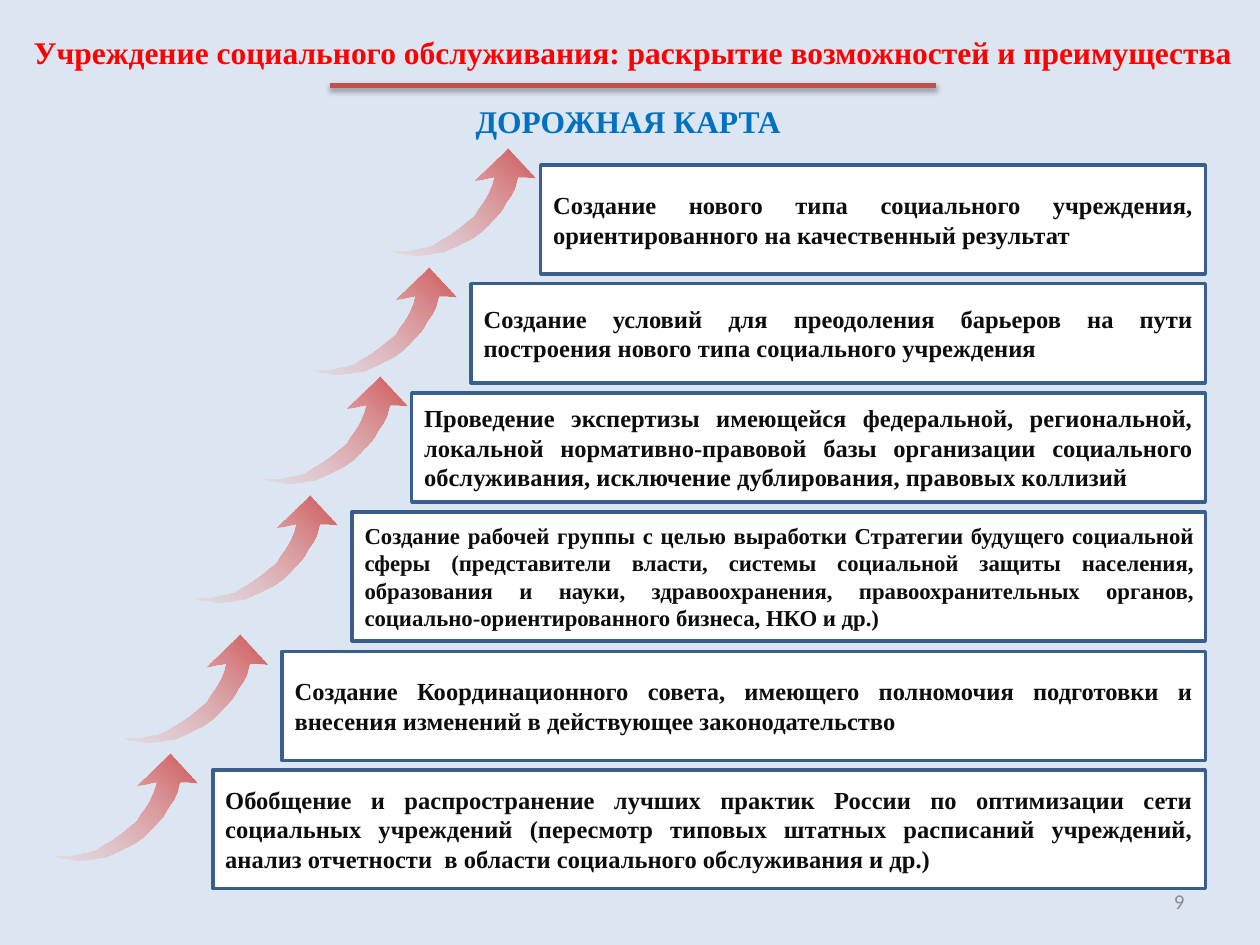
from dataclasses import dataclass

from lxml import etree
from pptx import Presentation
from pptx.dml.color import RGBColor
from pptx.enum.shapes import MSO_CONNECTOR, MSO_SHAPE
from pptx.enum.text import MSO_ANCHOR, MSO_AUTO_SIZE, PP_ALIGN
from pptx.oxml.ns import qn
from pptx.slide import Slide
from pptx.util import Cm, Pt

STRAIGHT = MSO_CONNECTOR.STRAIGHT
RECTANGLE = MSO_SHAPE.RECTANGLE
MIDDLE = MSO_ANCHOR.MIDDLE
NO_AUTOFIT = MSO_AUTO_SIZE.NONE
CENTER, RIGHT, JUSTIFY = PP_ALIGN.CENTER, PP_ALIGN.RIGHT, PP_ALIGN.JUSTIFY

COLORS = {
    "background": "DCE6F2",
    "title": "FF0000",
    "subtitle": "0070C0",
    "rule": "C0504D",
    "box": "FFFFFF",
    "border": "3A5F8C",
    "text": "0D0D0D",
    "number": "8C8C8C",
    "arrow_tail": "E9C2C2",
    "arrow_head": "D05656",
    "shadow": "000000",
}

BOX_RIGHT = 24.3
ARROW_RISE = 0.33  # each arrow starts this far above its box
ARROW_UNITS_PER_INCH = 100
ARROW_UNIT = 2.54 / ARROW_UNITS_PER_INCH
ARROW_OUTLINE = [
    (0, 81), (4, 81), (8, 81), (12, 81), (16, 80), (21, 79), (27, 78), (33, 76),
    (39, 72), (46, 68), (53, 63), (59, 58), (65, 53), (69, 47), (72, 43), (75, 38),
    (77, 34), (79, 30), (80, 27), (81, 23), (65, 26), (92, 0), (114, 24), (100, 23),
    (99, 25), (98, 30), (95, 37), (92, 41), (89, 46), (86, 51), (81, 56), (76, 61),
    (71, 66), (64, 71), (56, 75), (48, 79), (41, 82), (34, 83), (28, 84), (22, 85),
    (17, 85), (12, 84), (8, 83), (5, 83), (2, 82),
]

# arrow left, box left, box top, box height (cm), text size, text
STEPS = [
    (1.09, 4.29, 15.52, 2.39, 14,
     "Обобщение и распространение лучших практик России по оптимизации сети "
     "социальных учреждений (пересмотр типовых штатных расписаний учреждений, "
     "анализ отчетности  в области социального обслуживания и др.)"),
    (2.49, 5.69, 13.13, 2.2, 14,
     "Создание Координационного совета, имеющего полномочия подготовки и "
     "внесения изменений в действующее законодательство"),
    (3.91, 7.1, 10.32, 2.6, 13,
     "Создание рабочей группы с целью выработки Стратегии будущего социальной "
     "сферы (представители власти, системы социальной защиты населения, "
     "образования и науки, здравоохранения, правоохранительных органов, "
     "социально-ориентированного бизнеса, НКО и др.)"),
    (5.31, 8.3, 7.92, 2.2, 14,
     "Проведение экспертизы имеющейся федеральной, региональной, локальной "
     "нормативно-правовой базы организации социального обслуживания, "
     "исключение дублирования, правовых коллизий"),
    (6.3, 9.5, 5.72, 2.0, 14,
     "Создание условий для преодоления барьеров на пути построения нового "
     "типа социального учреждения"),
    (7.9, 10.9, 3.33, 2.2, 14,
     "Создание нового типа социального учреждения, ориентированного на "
     "качественный результат"),
]


def rgb(name):
    return RGBColor.from_string(COLORS[name])


@dataclass
class RoadmapSlide:
    slide: Slide
    font: str = "Times New Roman"

    def set_text(self, shape, text, size, color, align, bold=True, font=None, wrap=True):
        frame = shape.text_frame
        frame.text = text
        frame.word_wrap = wrap
        frame.auto_size = NO_AUTOFIT
        frame.vertical_anchor = MIDDLE
        paragraph = frame.paragraphs[0]
        paragraph.alignment = align
        paragraph.font.name = font or self.font
        paragraph.font.size = Pt(size)
        paragraph.font.bold = bold
        paragraph.font.color.rgb = rgb(color)

    def title(self, text, left, top, width, height):
        shape = self.slide.shapes.title
        shape.left, shape.top = Cm(left), Cm(top)
        shape.width, shape.height = Cm(width), Cm(height)
        self.set_text(shape, text, 18, "title", CENTER, wrap=False)

    def label(self, text, left, top, width, height, size, color, align, **style):
        shape = self.slide.shapes.add_textbox(Cm(left), Cm(top), Cm(width), Cm(height))
        self.set_text(shape, text, size, color, align, **style)

    def rule(self, left, right, top):
        """Horizontal line with a soft shadow below it."""
        line = self.slide.shapes.add_connector(
            STRAIGHT, Cm(left), Cm(top), Cm(right), Cm(top))
        line.line.color.rgb = rgb("rule")
        line.line.width = Pt(3)
        effects = etree.SubElement(line._element.spPr, qn("a:effectLst"))
        shadow = etree.SubElement(
            effects, qn("a:outerShdw"), blurRad=str(Pt(3.1)), dist=str(Pt(1.8)),
            dir="5400000", rotWithShape="0")
        color = etree.SubElement(shadow, qn("a:srgbClr"), val=COLORS["shadow"])
        etree.SubElement(color, qn("a:alpha"), val="35000")

    def box(self, text, left, top, height, size):
        shape = self.slide.shapes.add_shape(
            RECTANGLE, Cm(left), Cm(top), Cm(BOX_RIGHT - left), Cm(height))
        shape.shadow.inherit = False
        shape.fill.solid()
        shape.fill.fore_color.rgb = rgb("box")
        shape.line.color.rgb = rgb("border")
        shape.line.width = Pt(2)
        self.set_text(shape, text, size, "text", JUSTIFY)

    def arrow(self, left, top):
        """Curved arrow that rises to the right and fades towards its tail."""
        builder = self.slide.shapes.build_freeform(
            *ARROW_OUTLINE[0], scale=Cm(ARROW_UNIT))
        builder.add_line_segments(ARROW_OUTLINE[1:], close=True)
        shape = builder.convert_to_shape(Cm(left), Cm(top))
        shape.shadow.inherit = False
        shape.line.fill.background()
        shape.fill.gradient()
        shape.fill.gradient_angle = 45
        tail, head = shape.fill.gradient_stops
        tail.position, head.position = 0, 1
        tail.color.rgb = rgb("arrow_tail")
        head.color.rgb = rgb("arrow_head")
        tail_color = next(shape._element.spPr.iter(qn("a:srgbClr")))
        etree.SubElement(tail_color, qn("a:alpha"), val="32000")


def main():
    presentation = Presentation()
    presentation.slide_width, presentation.slide_height = Cm(25.4), Cm(19.05)
    slide = presentation.slides.add_slide(presentation.slide_layouts[5])
    slide.background.fill.solid()
    slide.background.fill.fore_color.rgb = rgb("background")

    roadmap = RoadmapSlide(slide)
    roadmap.title(
        "Учреждение социального обслуживания: раскрытие возможностей и преимущества",
        0.3, 0.53, 24.92, 1.02)
    roadmap.rule(6.65, 18.87, 1.73)
    roadmap.label("ДОРОЖНАЯ КАРТА", 9.3, 1.93, 6.73, 1.02, 18, "subtitle", CENTER,
                  wrap=False)
    for arrow_left, box_left, top, height, size, text in STEPS:
        roadmap.arrow(arrow_left, top - ARROW_RISE)
        roadmap.box(text, box_left, top, height, size)
    roadmap.label("9", 18.21, 17.65, 5.92, 1.02, 12, "number", RIGHT,
                  bold=False, font="Calibri")
    presentation.save("out.pptx")


if __name__ == "__main__":
    main()
